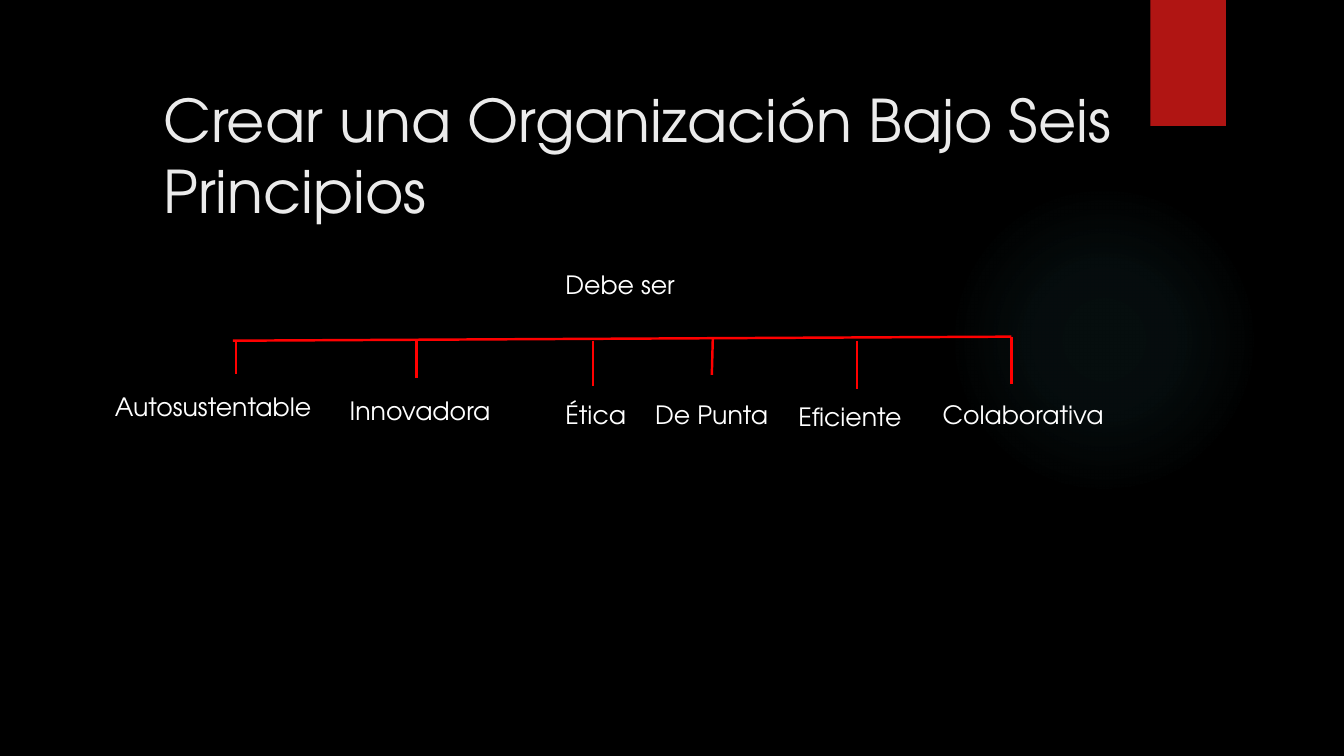
from lxml import etree
from pptx import Presentation
from pptx.dml.color import RGBColor as Rgb
from pptx.enum.shapes import MSO_CONNECTOR as Link, MSO_SHAPE as Kind
from pptx.enum.text import MSO_ANCHOR as Anchor, MSO_AUTO_SIZE as Fit
from pptx.oxml import parse_xml
from pptx.oxml.ns import nsdecls, qn
from pptx.util import Inches, Pt

FONT = "TeX Gyre Adventor"
WHITE, RED = "FFFFFF", "FF0000"

# label, left, top, width of its box, then start and end of its drop line
ITEMS = [
    ("Autosustentable", 1.04, 3.83, 2.55, (2.34, 3.39), (2.34, 3.71)),
    ("Innovadora", 3.37, 3.87, 1.64, (4.13, 3.38), (4.13, 3.75)),
    ("Ética", 5.51, 3.91, 0.82, (5.88, 3.38), (5.88, 3.83)),
    ("De Punta", 6.4, 3.91, 1.34, (7.07, 3.36), (7.06, 3.72)),
    ("Eficiente", 7.82, 3.93, 1.37, (8.5, 3.38), (8.5, 3.86)),
    ("Colaborativa", 9.25, 3.91, 1.91, (10.03, 3.34), (10.03, 3.81)),
]


def paint(fill, hue):
    fill.solid()
    fill.fore_color.rgb = Rgb.from_string(hue)


def add_text(slide, text, left, top, width, height=0.4, size=18,
             hue=WHITE, anchor=Anchor.TOP, fit=Fit.SHAPE_TO_FIT_TEXT):
    box = slide.shapes.add_textbox(
        Inches(left), Inches(top), Inches(width), Inches(height))
    frame = box.text_frame
    frame.word_wrap = True
    frame.auto_size = fit
    frame.vertical_anchor = anchor
    run = frame.paragraphs[0].add_run()
    run.text = text
    run.font.name = FONT
    run.font.size = Pt(size)
    run.font.color.rgb = Rgb.from_string(hue)


def add_line(slide, start, end):
    line = slide.shapes.add_connector(
        Link.STRAIGHT, *(Inches(n) for n in start + end))
    line.line.width = Pt(1.75)
    line.line.color.rgb = Rgb.from_string(RED)
    etree.SubElement(line._element.spPr, qn("a:effectLst"))


def add_block(slide, kind, left, top, width, height, hue):
    block = slide.shapes.add_shape(
        kind, Inches(left), Inches(top), Inches(width), Inches(height))
    block.shadow.inherit = False
    paint(block.fill, hue)
    block.line.fill.background()
    return block


def add_glow(slide, hue, stops):
    glow = add_block(slide, Kind.OVAL, 9.41, 1.83, 3.08, 3.08, hue)
    marks = "".join(
        f'<a:gs pos="{pos * 1000}"><a:srgbClr val="{hue}">'
        f'<a:alpha val="{alpha * 1000}"/></a:srgbClr></a:gs>'
        for pos, alpha in stops)
    grad = parse_xml(
        f'<a:gradFill {nsdecls("a")}><a:gsLst>{marks}</a:gsLst>'
        '<a:path path="circle"><a:fillToRect l="50000" t="50000" '
        'r="50000" b="50000"/></a:path></a:gradFill>')
    props = glow._element.spPr
    props.replace(props.find(qn("a:solidFill")), grad)


def add_shade(shape):
    effects = shape._element.spPr.find(qn("a:effectLst"))
    effects.append(parse_xml(
        f'<a:outerShdw {nsdecls("a")} blurRad="{Pt(3)}" dist="{Pt(2)}" '
        'dir="5400000" rotWithShape="0"><a:srgbClr val="000000">'
        '<a:alpha val="45000"/></a:srgbClr></a:outerShdw>'))


def main():
    deck = Presentation()
    deck.slide_width, deck.slide_height = Inches(13.33), Inches(7.5)
    slide = deck.slides.add_slide(deck.slide_layouts[6])

    # Backdrop: glow and red tab
    paint(slide.background.fill, "000000")
    add_glow(slide, "50B9C1", [(0, 7), (36, 6), (69, 0)])
    add_shade(add_block(slide, Kind.RECTANGLE, 11.41, 0, 0.75, 1.25, "B01513"))

    # Title and lead
    add_text(slide, "Crear una Organización Bajo Seis Principios",
             1.52, 0.77, 10.29, 1.53, size=42, hue="EBEBEB",
             anchor=Anchor.MIDDLE, fit=Fit.NONE)
    add_text(slide, "Debe ser", 5.51, 2.62, 1.4)

    # Bracket with the six principles
    add_line(slide, (2.31, 3.38), (10.03, 3.34))
    for label, left, top, width, start, end in ITEMS:
        add_line(slide, start, end)
        add_text(slide, label, left, top, width)

    deck.save("out.pptx")


if __name__ == "__main__":
    main()
